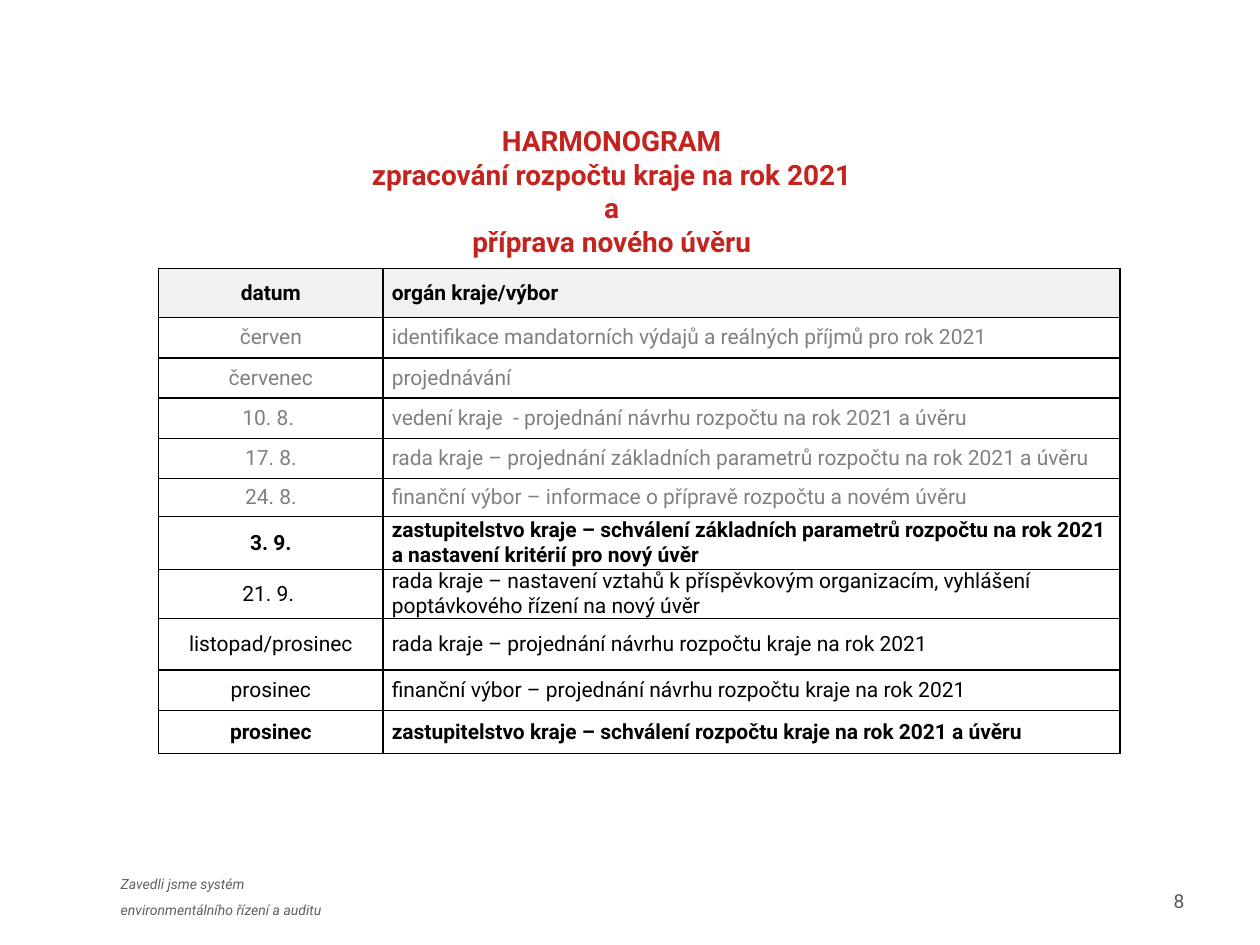
"""Build the budget schedule slide with its title, table and footer."""
from lxml import etree
from pptx import Presentation
from pptx.dml.color import RGBColor
from pptx.enum.text import MSO_ANCHOR as Anchor, MSO_AUTO_SIZE as AutoSize, PP_ALIGN as Align
from pptx.oxml.ns import qn
from pptx.util import Inches, Pt

COLORS = {
    "title": "C4241F", "text": "000000", "done": "808080", "header": "F2F2F2",
    "footer": "5F5F5F", "number": "575756", "border": "000000",
}
TITLE_LINES = ["HARMONOGRAM", "zpracování rozpočtu kraje na rok 2021", "a", "příprava nového úvěru"]
FOOTER_LINES = ["Zavedli jsme systém", "environmentálního řízení a auditu"]
ROWS = [
    (0.39, "text", True, "datum", "orgán kraje/výbor"),
    (0.32, "done", False, "červen", "identifikace mandatorních výdajů a reálných příjmů pro rok 2021"),
    (0.32, "done", False, "červenec", "projednávání"),
    (0.32, "done", False, "10. 8. ", "vedení kraje  - projednání návrhu rozpočtu na rok 2021 a úvěru"),
    (0.32, "done", False, "17. 8.", "rada kraje – projednání základních parametrů rozpočtu na rok 2021 a úvěru"),
    (0.3, "done", False, "24. 8.", "finanční výbor – informace o přípravě rozpočtu a novém úvěru"),
    (0.42, "text", True, "3. 9.", "zastupitelstvo kraje – schválení základních parametrů rozpočtu "
     "na rok 2021 a nastavení kritérií pro nový úvěr"),
    (0.32, "text", False, "21. 9. ", "rada kraje – nastavení vztahů k příspěvkovým organizacím, "
     "vyhlášení poptávkového řízení na nový úvěr"),
    (0.41, "text", False, "listopad/prosinec", "rada kraje – projednání návrhu rozpočtu kraje na rok 2021"),
    (0.32, "text", False, "prosinec", "finanční výbor – projednání návrhu rozpočtu kraje na rok 2021"),
    (0.34, "text", True, "prosinec", "zastupitelstvo kraje – schválení rozpočtu kraje na rok 2021 a úvěru"),
]


def write_lines(frame, lines, size, color, align, bold=False, italic=False):
    frame.word_wrap = True
    for index, line in enumerate(lines):
        paragraph = frame.paragraphs[0] if index == 0 else frame.add_paragraph()
        paragraph.alignment = align
        run = paragraph.add_run()
        run.text = line
        run.font.name = "Roboto"
        run.font.size = Pt(size)
        run.font.bold = bold
        run.font.italic = italic
        run.font.color.rgb = RGBColor.from_string(COLORS[color])


def add_borders(cell):
    properties = cell._tc.get_or_add_tcPr()
    for position, side in enumerate(("lnL", "lnR", "lnT", "lnB")):
        line = etree.Element(qn(f"a:{side}"), w=str(Pt(1)))
        fill = etree.SubElement(line, qn("a:solidFill"))
        etree.SubElement(fill, qn("a:srgbClr"), val=COLORS["border"])
        properties.insert(position, line)


presentation = Presentation()
presentation.slide_width = Inches(10)
presentation.slide_height = Inches(7.5)
slide = presentation.slides.add_slide(presentation.slide_layouts[5])

title = slide.shapes.title
title.left, title.top = Inches(0.33), Inches(0.93)
title.width, title.height = Inches(9.05), Inches(1.2)
title.text_frame.auto_size = AutoSize.NONE
title.text_frame.vertical_anchor = Anchor.TOP
write_lines(title.text_frame, TITLE_LINES, 16, "title", Align.CENTER, bold=True)

table_shape = slide.shapes.add_table(
    len(ROWS), 2, Inches(1.26), Inches(2.13), Inches(7.63), Inches(3.83))
table = table_shape.table
table.columns[0].width = Inches(1.78)
table.columns[1].width = Inches(5.85)
for row_index, (height, color, bold, *texts) in enumerate(ROWS):
    table.rows[row_index].height = Inches(height)
    for column, (text, align) in enumerate(zip(texts, (Align.CENTER, Align.LEFT))):
        cell = table.cell(row_index, column)
        cell.margin_left = cell.margin_right = Inches(0.07)
        cell.margin_top = cell.margin_bottom = 0
        cell.vertical_anchor = Anchor.MIDDLE
        if row_index == 0:
            cell.fill.solid()
            cell.fill.fore_color.rgb = RGBColor.from_string(COLORS["header"])
        else:
            cell.fill.background()
        add_borders(cell)
        write_lines(cell.text_frame, [text], 12, color, align, bold=bold)

footer = slide.shapes.add_textbox(Inches(0.86), Inches(6.88), Inches(1.89), Inches(0.41))
write_lines(footer.text_frame, FOOTER_LINES, 8, "footer", Align.JUSTIFY, italic=True)
for paragraph in footer.text_frame.paragraphs:
    paragraph.line_spacing = 1.15
footer.text_frame.paragraphs[1].space_before = Pt(4)

number = slide.shapes.add_textbox(Inches(7.17), Inches(6.95), Inches(2.33), Inches(0.4))
number.text_frame.vertical_anchor = Anchor.MIDDLE
write_lines(number.text_frame, ["8"], 11, "number", Align.RIGHT)

presentation.save("out.pptx")
